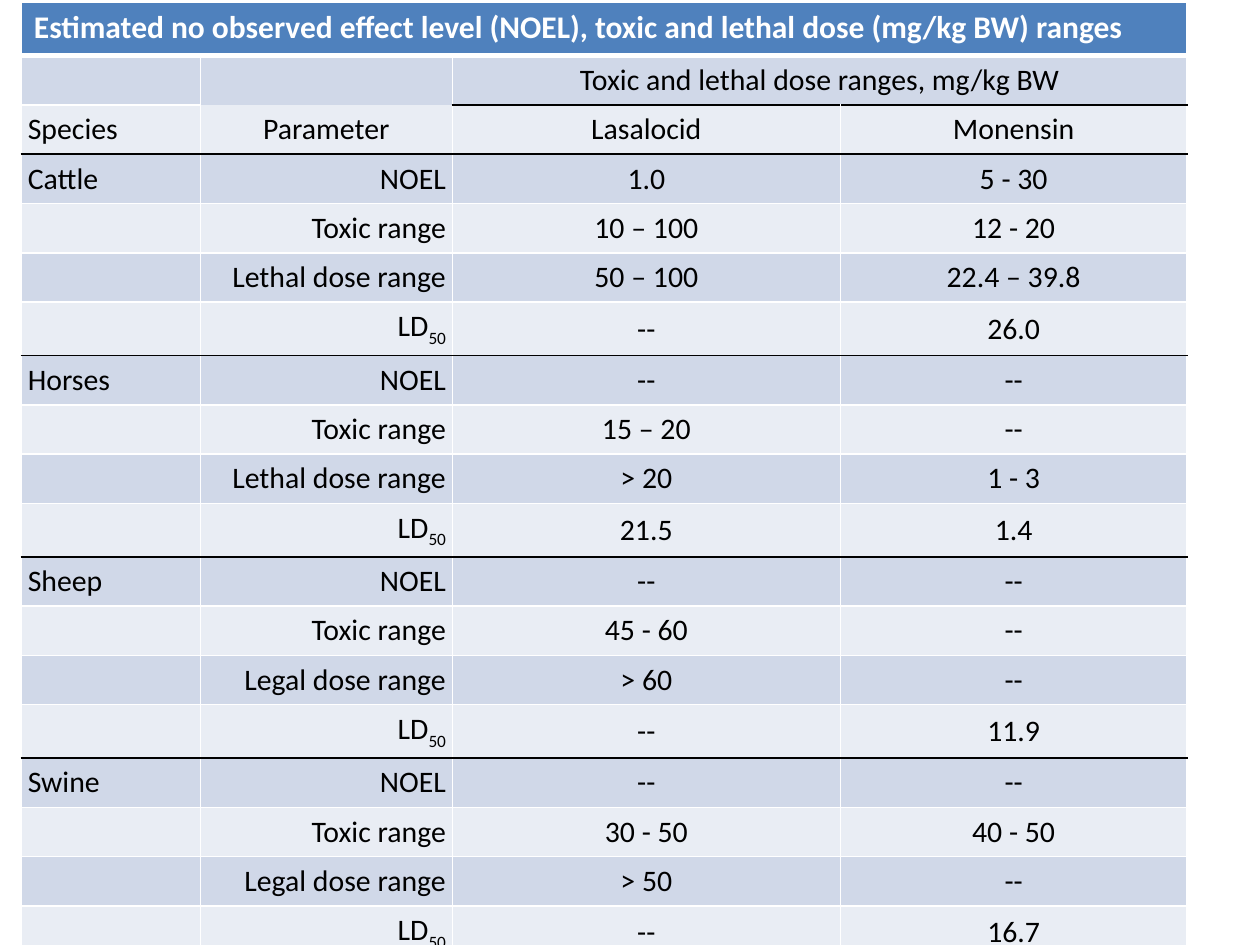
from dataclasses import dataclass

from lxml.etree import SubElement
from pptx import Presentation
from pptx.dml.color import RGBColor as RGB
from pptx.enum.text import MSO_ANCHOR as Anchor, PP_ALIGN as Align
from pptx.oxml.ns import qn
from pptx.util import Cm, Pt


@dataclass(frozen=True)
class Theme:
    """Colours, font and type sizes of the slide."""
    font: str = "Calibri"
    title_size: int = 18
    body_size: int = 17
    title_fill: str = "4F81BD"
    bands: tuple = ("E9EDF4", "D0D8E8")
    rule: str = "000000"
    grid: str = "FFFFFF"
    title_text: str = "FFFFFF"
    body_text: str = "000000"


THEME = Theme()
TITLE = "Estimated no observed effect level (NOEL), toxic and lethal dose (mg/kg BW) ranges"
SPAN_HEADING = "Toxic and lethal dose ranges, mg/kg BW"
HEADINGS = ("Species", "Parameter", "Lasalocid", "Monensin")
DOSES = {
    "Cattle": ("Lethal", ("1.0", "5 - 30"), ("10 – 100", "12 - 20"),
               ("50 – 100", "22.4 – 39.8"), ("--", "26.0")),
    "Horses": ("Lethal", ("--", "--"), ("15 – 20", "--"), ("> 20", "1 - 3"), ("21.5", "1.4")),
    "Sheep": ("Legal", ("--", "--"), ("45 - 60", "--"), ("> 60", "--"), ("--", "11.9")),
    "Swine": ("Legal", ("--", "--"), ("30 - 50", "40 - 50"), ("> 50", "--"), ("--", "16.7")),
}
COLUMN_WIDTHS = (3.61, 5.08, 7.82, 6.99)
TITLE_HEIGHT, ROW_HEIGHT, LAST_HEIGHT = 1.07, 0.76, 0
BLOCK = 4
COLUMN_ALIGN = (Align.LEFT, Align.RIGHT, Align.CENTER, Align.CENTER)


def dose_rows():
    """Return the text of every table row from top to bottom."""
    rows = [(TITLE, "", "", ""), ("", "", SPAN_HEADING, ""), HEADINGS]
    for species, (dose_kind, *ranges) in DOSES.items():
        parameters = ("NOEL", "Toxic range", f"{dose_kind} dose range", "LD50")
        for index, (parameter, values) in enumerate(zip(parameters, ranges)):
            rows.append((species if index == 0 else "", parameter, *values))
    return rows


def edge_below(row, column):
    """Return colour and width of the line under a cell, or None for no line."""
    if row == 0:
        return THEME.grid, 3
    if row == 1 and column == 1:
        return None
    ruled = (row == 1 and column > 1) or (row >= 2 and (row - 2) % BLOCK == 0)
    return (THEME.rule if ruled else THEME.grid), 1


def draw_borders(cell, row, column):
    """Draw the four edges of a cell."""
    side, top = (THEME.grid, 1), (THEME.grid, 1)
    edges = {"a:lnL": side, "a:lnR": side,
             "a:lnT": edge_below(row - 1, column) if row else top,
             "a:lnB": edge_below(row, column)}
    properties = cell._tc.get_or_add_tcPr()
    for tag, edge in edges.items():
        line = SubElement(properties, qn(tag))
        if edge is None:
            SubElement(line, qn("a:noFill"))
            continue
        colour, width = edge
        line.set("w", str(Pt(width)))
        fill = SubElement(line, qn("a:solidFill"))
        SubElement(fill, qn("a:srgbClr")).set("val", colour)


def write_text(cell, text, size, colour, bold, align):
    """Write one line of text, lowering the digits of LD50."""
    paragraph = cell.text_frame.paragraphs[0]
    paragraph.alignment = align
    if not text:
        SubElement(paragraph._p, qn("a:endParaRPr")).set("sz", str(size * 100))
        return
    pieces = ("LD", "50") if text == "LD50" else (text,)
    look = {"name": THEME.font, "size": Pt(size), "bold": bold}
    for index, piece in enumerate(pieces):
        run = paragraph.add_run()
        run.text = piece
        for name, value in look.items():
            setattr(run.font, name, value)
        run.font.color.rgb = RGB.from_string(colour)
        if index:
            run._r.get_or_add_rPr().set("baseline", "-25000")


def fill_cell(cell, row, column, text):
    """Give a cell its borders, fill, margins and text."""
    draw_borders(cell, row, column)
    cell.fill.solid()
    if row == 0:
        cell.fill.fore_color.rgb = RGB.from_string(THEME.title_fill)
        write_text(cell, text, THEME.title_size, THEME.title_text, True, Align.LEFT)
        return
    cell.fill.fore_color.rgb = RGB.from_string(THEME.bands[row % 2])
    inset = Cm(0.13)
    layout = {"vertical_anchor": Anchor.MIDDLE, "margin_left": inset, "margin_right": inset,
              "margin_top": inset, "margin_bottom": inset}
    for name, value in layout.items():
        setattr(cell, name, value)
    align = Align.CENTER if row == 2 and column else COLUMN_ALIGN[column]
    write_text(cell, text, THEME.body_size, THEME.body_text, False, align)


def add_dose_table(slide, left, top, width, height):
    """Place the dose table in the given box."""
    rows = dose_rows()
    frame = slide.shapes.add_table(len(rows), len(HEADINGS), left, top, width, height)
    table = frame.table
    for column, share in zip(table.columns, COLUMN_WIDTHS):
        column.width = int(width * share / sum(COLUMN_WIDTHS))
    heights = (TITLE_HEIGHT, *[ROW_HEIGHT] * (len(rows) - 2), LAST_HEIGHT)
    for table_row, row_height in zip(table.rows, heights):
        table_row.height = Cm(row_height)
    for row, texts in enumerate(rows):
        for column, text in enumerate(texts):
            fill_cell(table.cell(row, column), row, column, text)
    table.cell(0, 0).merge(table.cell(0, 3))
    table.cell(1, 2).merge(table.cell(1, 3))
    frame.height = height


def main():
    """Build the slide and save it."""
    deck = Presentation()
    deck.slide_width, deck.slide_height = Cm(25.4), Cm(19.05)
    slide = deck.slides.add_slide(deck.slide_layouts[6])
    add_dose_table(slide, Cm(0.43), Cm(0.05), Cm(23.5), Cm(18.59))
    deck.save("out.pptx")


if __name__ == "__main__":
    main()
